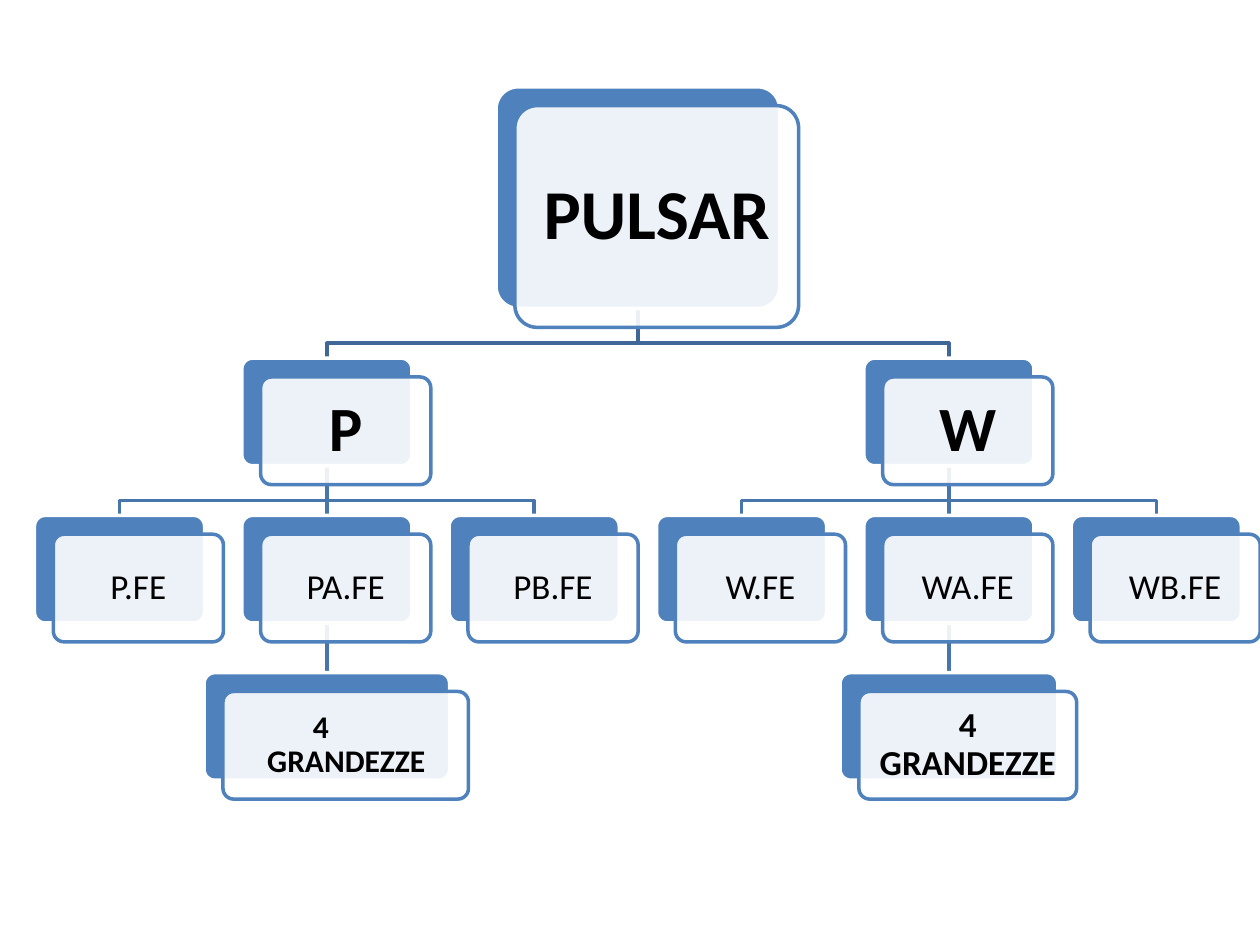
from dataclasses import dataclass

from lxml.etree import SubElement
from pptx import Presentation
from pptx.dml.color import RGBColor
from pptx.enum.shapes import MSO_CONNECTOR, MSO_SHAPE
from pptx.enum.text import MSO_ANCHOR, PP_ALIGN
from pptx.oxml.ns import qn
from pptx.util import Cm, Pt

COLORS = {
    "card": "4F81BD",
    "paper": "FFFFFF",
    "text": "000000",
    "top_link": "3F6797",
    "link": "4875AC",
}
FIRST_COLUMN, COLUMN_PITCH = 2.41, 4.18
ROW_TOPS = (1.75, 7.22, 10.39, 13.56)
SHIFT = 0.38
ELBOW_RISE = 0.3
CORNER = 0.1


@dataclass
class Node:
    """A card of the tree, with its column, row and parent."""
    text: str
    column: float
    row: int
    parent: str = ""
    size: int = 20
    bold: bool = False
    width: float = 3.43
    height: float = 2.17
    inset: float = 0.14
    margin: float = 0
    indent: float = 0

    @property
    def center(self):
        """Return the horizontal centre of the back card in cm."""
        return FIRST_COLUMN + self.column * COLUMN_PITCH

    @property
    def top(self):
        """Return the top of the back card in cm."""
        return ROW_TOPS[self.row]


NODES = {
    "root": Node("PULSAR", 2.5, 0, size=40, bold=True, width=5.72, height=4.47, inset=0.3),
    "p": Node("P", 1, 1, "root", size=36, bold=True, inset=0.32),
    "p_fe": Node("P.FE", 0, 2, "p"),
    "pa_fe": Node("PA.FE", 1, 2, "p"),
    "pa_sizes": Node("4\vGRANDEZZE", 1, 3, "pa_fe", size=18, bold=True, width=4.95,
                     inset=0.12, margin=0.71, indent=0.92),
    "pb_fe": Node("PB.FE", 2, 2, "p"),
    "w": Node("W", 4, 1, "root", size=36, bold=True, inset=0.32),
    "w_fe": Node("W.FE", 3, 2, "w"),
    "wa_fe": Node("WA.FE", 4, 2, "w"),
    "wa_sizes": Node("4 GRANDEZZE", 4, 3, "wa_fe", bold=True, width=4.39),
    "wb_fe": Node("WB.FE", 5, 2, "w"),
}


def rgb(name):
    """Return a named palette colour."""
    return RGBColor.from_string(COLORS[name])


def style_line(sp, color):
    """Give a shape or link its 2 pt line."""
    sp.line.color.rgb = rgb(color)
    sp.line.width = Pt(2)


def add_card(s, node, shift, fill, line):
    """Add one rounded card of a node, moved down and right by shift."""
    sp = s.shapes.add_shape(
        MSO_SHAPE.ROUNDED_RECTANGLE, Cm(node.center - node.width / 2 + shift),
        Cm(node.top + shift), Cm(node.width), Cm(node.height))
    sp.adjustments[0] = CORNER
    sp.shadow.inherit = False
    sp.fill.solid()
    sp.fill.fore_color.rgb = rgb(fill)
    style_line(sp, line)
    return sp


def set_opacity(sp, percent):
    """Make the solid fill of a shape translucent."""
    color = sp.element.spPr.find(qn("a:solidFill"))[0]
    SubElement(color, qn("a:alpha")).set("val", str(percent * 1000))


def set_text(sp, node):
    """Write the label of a node on its front card."""
    tf = sp.text_frame
    tf.word_wrap = True
    tf.vertical_anchor = MSO_ANCHOR.MIDDLE
    tf.margin_left = tf.margin_right = tf.margin_top = tf.margin_bottom = Cm(node.inset)
    p = tf.paragraphs[0]
    p.text = node.text
    p.alignment = PP_ALIGN.CENTER
    p.line_spacing = 0.9
    p.font.name = "Calibri"
    p.font.size = Pt(node.size)
    p.font.bold = node.bold
    p.font.color.rgb = rgb("text")
    if node.margin:
        p.alignment = PP_ALIGN.LEFT
        pPr = p._p.get_or_add_pPr()
        pPr.set("marL", str(Cm(node.margin)))
        pPr.set("indent", str(Cm(node.indent)))


def add_node(s, node):
    """Add the back and front cards of a node and return the back one."""
    back = add_card(s, node, 0, "card", "paper")
    front = add_card(s, node, SHIFT, "paper", "card")
    set_opacity(front, 90)
    set_text(front, node)
    return back


def add_straight_link(s, upper, lower):
    """Join two cards of one column with a straight connector."""
    link = s.shapes.add_connector(MSO_CONNECTOR.STRAIGHT, 0, 0, 0, 0)
    link.begin_connect(upper, 2)
    link.end_connect(lower, 0)
    return link


def add_elbow_link(s, parent, child):
    """Draw a bent link from a parent down to a child in another column."""
    bend = child.top - ELBOW_RISE
    points = [(parent.center, bend), (child.center, bend), (child.center, child.top)]
    builder = s.shapes.build_freeform(Cm(parent.center), Cm(parent.top + parent.height))
    builder.add_line_segments([(Cm(x), Cm(y)) for x, y in points], close=False)
    link = builder.convert_to_shape()
    link.fill.background()
    return link


def add_link(s, key, cards):
    """Link a node to its parent, behind all cards."""
    child = NODES[key]
    parent = NODES[child.parent]
    if parent.column == child.column:
        link = add_straight_link(s, cards[child.parent], cards[key])
    else:
        link = add_elbow_link(s, parent, child)
    style_line(link, "top_link" if parent.row == 0 else "link")
    SubElement(link.element.spPr, qn("a:effectLst"))
    s.shapes.element.insert(2, link.element)


def main():
    """Build the tree slide and save it."""
    prs = Presentation()
    prs.slide_width, prs.slide_height = Cm(25.4), Cm(19.05)
    s = prs.slides.add_slide(prs.slide_layouts[6])
    cards = {key: add_node(s, node) for key, node in NODES.items()}
    for key, node in NODES.items():
        if node.parent:
            add_link(s, key, cards)
    prs.save("out.pptx")


if __name__ == "__main__":
    main()
